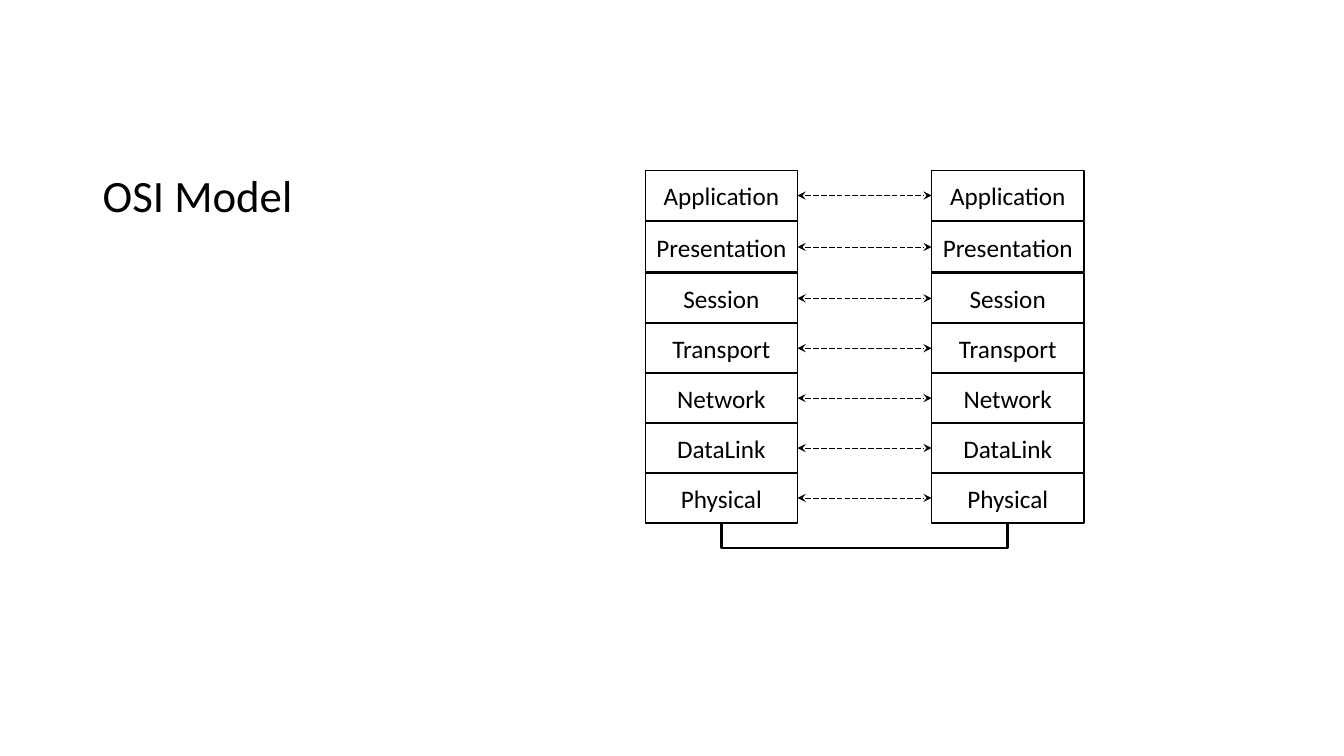
from pptx import Presentation
from pptx.dml.color import RGBColor
from pptx.enum import dml, shapes, text
from pptx.oxml.ns import qn
from pptx.util import Inches, Pt
from lxml import etree

TITLE = "OSI Model"
LAYERS = ["Application", "Presentation", "Session", "Transport",
          "Network", "DataLink", "Physical"]

THEME = {
    "ink": RGBColor(0, 0, 0), "font": "Calibri",
    "title": Pt(32), "layer": Pt(18),
    "box_line": Pt(1), "arrow_line": Pt(0.5), "link_line": Pt(2),
}

STACK_LEFTS = (6.4, 9.24)
STACK_TOP, BOX_W, BOX_H = 1.69, 1.51, 0.5
PITCH, EXTRA, WIDE_ROWS = 0.495, 0.015, 2  # the first two rows sit slightly wider apart
LINK_RISE, LINK_DROP = 0.01, 0.25
TOP, LEFT, BOTTOM, RIGHT = range(4)  # connection sites of a rectangle


def put_text(sp, words, size, align, anchor):
    tf = sp.text_frame
    for name, value in {"word_wrap": True, "vertical_anchor": anchor}.items():
        setattr(tf, name, value)
    p = tf.paragraphs[0]
    p.alignment = align
    r = p.add_run()
    r.text = words
    for name, value in {"name": THEME["font"], "size": size}.items():
        setattr(r.font, name, value)
    r.font.color.rgb = THEME["ink"]
    return p


def add_title(slide):
    sp = slide.shapes.add_textbox(Inches(0.92), Inches(0.5), Inches(4.3), Inches(1.75))
    p = put_text(sp, TITLE, THEME["title"], text.PP_ALIGN.LEFT, text.MSO_ANCHOR.BOTTOM)
    p.line_spacing = 0.9


def add_stack(slide, left):
    boxes = []
    for i, layer in enumerate(LAYERS):
        top = STACK_TOP + i * PITCH + min(i, WIDE_ROWS) * EXTRA
        sp = slide.shapes.add_shape(shapes.MSO_SHAPE.RECTANGLE, Inches(left),
                                    Inches(top), Inches(BOX_W), Inches(BOX_H))
        sp.shadow.inherit = False
        sp.fill.background()
        sp.line.color.rgb = THEME["ink"]
        sp.line.width = THEME["box_line"]
        put_text(sp, layer, THEME["layer"], text.PP_ALIGN.CENTER, text.MSO_ANCHOR.MIDDLE)
        boxes.append(sp)
    return boxes


def connect(slide, kind, start, start_site, end, end_site, width):
    """Join two boxes with a plain black connector."""
    line = slide.shapes.add_connector(kind, 0, 0, 0, 0)
    line.begin_connect(start, start_site)
    line.end_connect(end, end_site)
    line.line.color.rgb = THEME["ink"]
    line.line.width = width
    etree.SubElement(line._element.spPr, qn("a:effectLst"))
    return line


def add_peer_arrow(slide, left_box, right_box):
    arrow = connect(slide, shapes.MSO_CONNECTOR.STRAIGHT, left_box, RIGHT,
                    right_box, LEFT, THEME["arrow_line"])
    arrow.line.dash_style = dml.MSO_LINE.LONG_DASH
    ln = arrow.line._get_or_add_ln()
    for end in ("a:headEnd", "a:tailEnd"):
        etree.SubElement(ln, qn(end), type="stealth")


def add_physical_link(slide, left_box, right_box):
    """Run a U-shaped elbow below the two stacks."""
    link = connect(slide, shapes.MSO_CONNECTOR.ELBOW, left_box, BOTTOM,
                   right_box, BOTTOM, THEME["link_line"])
    span = STACK_LEFTS[1] - STACK_LEFTS[0]
    mid_x = STACK_LEFTS[0] + (BOX_W + span) / 2
    mid_y = left_box.top.inches + BOX_H + LINK_RISE / 2
    frame = {"left": mid_x - LINK_RISE / 2, "top": mid_y - span / 2,
             "width": LINK_RISE, "height": span}
    for name, value in frame.items():
        setattr(link, name, Inches(value))
    spPr = link._element.spPr
    xfrm = spPr.find(qn("a:xfrm"))
    for name, value in {"rot": "16200000", "flipH": "1"}.items():
        xfrm.set(name, value)
    guides = spPr.find(qn("a:prstGeom")).find(qn("a:avLst"))
    bend = round(LINK_DROP / LINK_RISE * 100000)
    etree.SubElement(guides, qn("a:gd"), name="adj1", fmla=f"val {bend}")


def main():
    prs = Presentation()
    prs.slide_width, prs.slide_height = Inches(13.33), Inches(7.5)
    slide = prs.slides.add_slide(prs.slide_layouts[6])
    add_title(slide)
    left_stack, right_stack = [add_stack(slide, left) for left in STACK_LEFTS]
    add_physical_link(slide, left_stack[-1], right_stack[-1])
    for pair in zip(left_stack, right_stack):
        add_peer_arrow(slide, *pair)
    prs.save("out.pptx")


if __name__ == "__main__":
    main()
